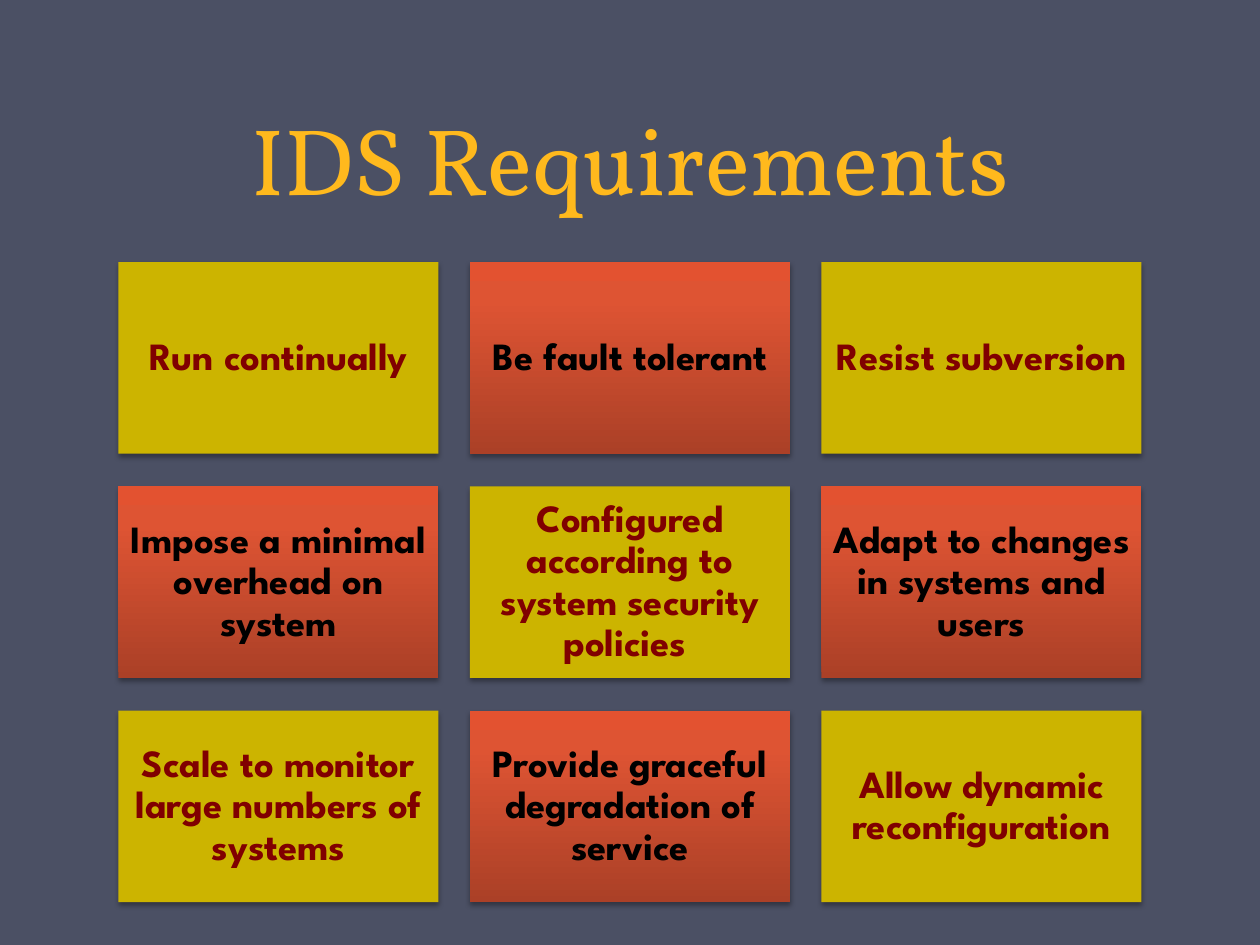
from dataclasses import dataclass

from lxml import etree
from pptx import Presentation
from pptx import util as u
from pptx.dml.color import RGBColor
from pptx.enum import shapes, text
from pptx.oxml import parse_xml
from pptx.oxml.ns import nsdecls, qn


@dataclass(frozen=True)
class Theme:
    background: str = "4B5064"
    title: str = "FFB91D"
    gold: str = "CCB400"
    gold_text: str = "800000"
    red_stops: tuple = ((0, "AB4027"), (80, "DE5433"), (100, "E35230"))
    red_text: str = "000000"
    title_font: str = "Vollkorn"
    card_font: str = "League Spartan"
    title_size: int = 54
    title_leading: int = 58
    card_size: int = 22


@dataclass(frozen=True)
class Grid:
    left: float = 0.94
    top: float = 2.08
    width: float = 2.54
    height: float = 1.52
    gap: float = 0.25
    row_gap: float = 0.26

    def cell(self, col, row):
        x = self.left + col * (self.width + self.gap)
        y = self.top + row * (self.height + self.row_gap)
        return [u.Inches(v) for v in (x, y, self.width, self.height)]


class Deck:
    def __init__(self, theme, grid):
        self.theme, self.grid = theme, grid
        self.prs = Presentation()
        self.prs.slide_width, self.prs.slide_height = u.Inches(10), u.Inches(7.5)
        self.s = self.prs.slides.add_slide(self.prs.slide_layouts[6])
        fill = self.s.background.fill
        fill.solid()
        fill.fore_color.rgb = RGBColor.from_string(theme.background)

    def add_words(self, tf, words, font, size, color, leading, anchor, bold=False):
        tf.word_wrap = True
        tf.vertical_anchor = anchor
        p = tf.paragraphs[0]
        p.alignment = text.PP_ALIGN.CENTER
        p.line_spacing = leading
        r = p.add_run()
        r.text = words
        r.font.name, r.font.size, r.font.bold = font, u.Pt(size), bold
        r.font.color.rgb = RGBColor.from_string(color)

    def title(self, words):
        t = self.theme
        box = self.s.shapes.add_textbox(u.Inches(0.5), 0, u.Inches(9), u.Inches(1.75))
        self.add_words(box.text_frame, words, t.title_font, t.title_size, t.title,
                       u.Pt(t.title_leading), text.MSO_ANCHOR.BOTTOM)

    def drop_shadow(self, sp):
        sp.shadow.inherit = False
        effects = sp._element.spPr.find(qn("a:effectLst"))
        effects.append(parse_xml(
            f'<a:outerShdw {nsdecls("a")} blurRad="{u.Pt(3.1)}" dist="{u.Pt(1.8)}" '
            'dir="5400000" algn="ctr" rotWithShape="0"><a:srgbClr val="000000">'
            '<a:alpha val="35000"/></a:srgbClr></a:outerShdw>'))

    def red_gradient(self, sp):
        sp.fill.gradient()
        sp.fill.gradient_angle = 90
        stops = sp._element.spPr.find(qn("a:gradFill")).find(qn("a:gsLst"))
        for stop in list(stops):
            stops.remove(stop)
        for share, color in self.theme.red_stops:
            gs = etree.SubElement(stops, qn("a:gs"), pos=str(share * 1000))
            etree.SubElement(gs, qn("a:srgbClr"), val=color)

    def card(self, words, col, row):
        t = self.theme
        sp = self.s.shapes.add_shape(shapes.MSO_SHAPE.RECTANGLE, *self.grid.cell(col, row))
        sp.line.fill.background()
        self.drop_shadow(sp)
        if (col + row) % 2:
            self.red_gradient(sp)
            color = t.red_text
        else:
            sp.fill.solid()
            sp.fill.fore_color.rgb = RGBColor.from_string(t.gold)
            color = t.gold_text
        tf = sp.text_frame
        tf.margin_left = tf.margin_right = tf.margin_top = tf.margin_bottom = u.Inches(0.09)
        self.add_words(tf, words, t.card_font, t.card_size, color, 0.9,
                       text.MSO_ANCHOR.MIDDLE, bold=True)


REQUIREMENTS = (
    ("Run continually", "Be fault tolerant", "Resist subversion"),
    ("Impose a minimal overhead on system",
     "Configured according to system security policies ",
     "Adapt to changes in systems and users"),
    ("Scale to monitor large numbers of systems",
     "Provide graceful degradation of service",
     "Allow dynamic reconfiguration"),
)


def main():
    deck = Deck(Theme(), Grid())
    deck.title("IDS Requirements")
    for row, names in enumerate(REQUIREMENTS):
        for col, words in enumerate(names):
            deck.card(words, col, row)
    deck.prs.save("out.pptx")


if __name__ == "__main__":
    main()
